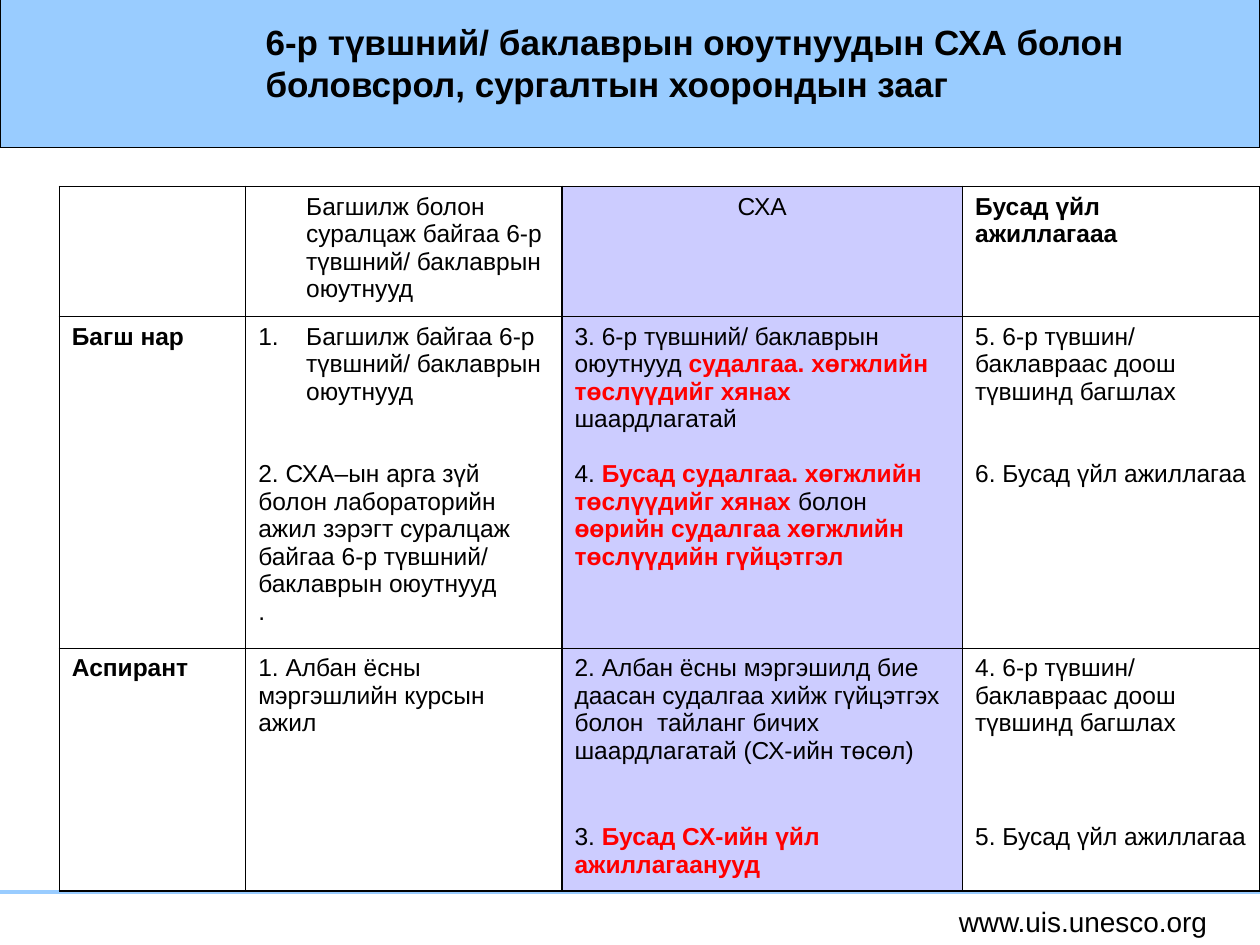
from dataclasses import dataclass
from itertools import accumulate

from lxml import etree
from pptx import Presentation
from pptx.dml.color import RGBColor
from pptx.enum.shapes import MSO_CONNECTOR, MSO_SHAPE
from pptx.enum.text import MSO_ANCHOR, PP_ALIGN
from pptx.oxml.ns import qn
from pptx.util import Inches, Pt

LEFT, CENTER = PP_ALIGN.LEFT, PP_ALIGN.CENTER
MIDDLE = MSO_ANCHOR.MIDDLE
RECTANGLE, STRAIGHT = MSO_SHAPE.RECTANGLE, MSO_CONNECTOR.STRAIGHT


@dataclass(frozen=True)
class Theme:
    font: str = "Arial"
    ink: str = "000000"
    accent: str = "FF0000"
    band: str = "99CCFF"
    column: str = "CCCCFF"
    title_size: float = 20
    body_size: float = 14
    footer_size: float = 16
    thin: float = 0.75
    outer: float = 1
    rule: float = 2.25


THEME = Theme()

# The slide is a grid of 1000 columns and 750 rows
WIDTH, HEIGHT = Inches(10), Inches(7.5)
UNIT = WIDTH // 1000
HEADER_BOX = (0, -8, 1000, 125)
TITLE_BOX = (201, 0, 774, 100)
TABLE_BOX = (47, 148, 953, 554)
FOOTER_BOX = (0, 708, 1000, 42)
COLUMNS = (148, 251, 318, 236)
ROWS = (98, 109, 154, 134, 59)
GROUP_STARTS = (0, 1, 3)  # rows with a line above them
RESEARCH_COLUMN = 2
HANGING = 38

# A cell is a list of paragraphs; in each, odd pieces between bars are accented
CELLS = [
    ["", "Багшилж болон суралцаж байгаа 6-р түвшний/ баклаврын оюутнууд",
     "СХА", "Бусад үйл ажиллагааа"],
    ["Багш нар", "Багшилж байгаа 6-р түвшний/ баклаврын оюутнууд",
     "3. 6-р түвшний/ баклаврын оюутнууд |судалгаа. хөгжлийн төслүүдийг хянах |шаардлагатай",
     "5. 6-р түвшин/ баклавраас доош түвшинд багшлах"],
    ["", "2. СХА–ын арга зүй болон лабораторийн ажил зэрэгт суралцаж байгаа "
     "6-р түвшний/ баклаврын оюутнууд\n.",
     "4. |Бусад судалгаа. хөгжлийн төслүүдийг хянах |болон "
     "|өөрийн судалгаа хөгжлийн төслүүдийн гүйцэтгэл",
     "6. Бусад үйл ажиллагаа"],
    ["Аспирант", "1. Албан ёсны мэргэшлийн курсын ажил",
     "2. Албан ёсны мэргэшилд бие даасан судалгаа хийж гүйцэтгэх болон  тайланг "
     "бичих шаардлагатай (СХ-ийн төсөл)",
     "4. 6-р түвшин/ баклавраас доош түвшинд багшлах"],
    ["", "", "3. |Бусад СХ-ийн үйл ажиллагаанууд", "5. Бусад үйл ажиллагаа"],
]
CELL_FORMATS = {
    (0, 1): {"margin": HANGING},
    (0, 2): {"align": CENTER},
    (0, 3): {"bold": True},
    (1, 0): {"bold": True},
    (1, 1): {"margin": HANGING, "numbered": True},
    (3, 0): {"bold": True},
}


def color(value):
    return RGBColor.from_string(value)


def place(box):
    return [part * UNIT for part in box]


def write(frame, text, *, size, bold=False, align=LEFT, margin=0, numbered=False):
    """Fill a text frame, one paragraph for each line of the text."""
    for index, line in enumerate(text.split("\n")):
        paragraph = frame.add_paragraph() if index else frame.paragraphs[0]
        properties = paragraph._p.get_or_add_pPr()
        if margin:
            properties.set("marL", str(margin * UNIT))
            properties.set("indent", str(-margin * UNIT if numbered else 0))
        if numbered:
            etree.SubElement(properties, qn("a:buAutoNum"), type="arabicPeriod")
        paragraph.alignment = align
        paragraph.font.size = Pt(size)
        for position, piece in enumerate(line.split("|")):
            if not piece:
                continue
            accented = position % 2 == 1
            run = paragraph.add_run()
            run.text = piece
            run.font.name = THEME.font
            run.font.size = Pt(size)
            run.font.bold = bold or accented
            run.font.color.rgb = color(THEME.accent if accented else THEME.ink)


def draw_border(cell, side, width):
    """Draw one side of a cell; a width of None leaves it open."""
    attributes = {"w": str(Pt(width or 0))}
    line = etree.Element(qn(f"a:ln{side}"), attributes)
    if width is None:
        etree.SubElement(line, qn("a:noFill"))
    else:
        fill = etree.SubElement(line, qn("a:solidFill"))
        etree.SubElement(fill, qn("a:srgbClr"), val=THEME.ink)
    return line


def add_header(slide, header_box, title_box):
    # Band across the top
    band = slide.shapes.add_shape(RECTANGLE, *place(header_box))
    band.line.color.rgb = color(THEME.ink)
    band.line.width = Pt(THEME.thin)
    # Title
    title = slide.shapes.add_shape(RECTANGLE, *place(title_box))
    title.line.fill.background()
    for shape in (band, title):
        shape.shadow.inherit = False
        shape.fill.solid()
        shape.fill.fore_color.rgb = color(THEME.band)
    title.text_frame.word_wrap = True
    title.text_frame.vertical_anchor = MIDDLE
    write(title.text_frame,
          "6-р түвшний/ баклаврын оюутнуудын СХА болон боловсрол, сургалтын хоорондын зааг",
          size=THEME.title_size, bold=True)


def add_footer(slide, box):
    left, top, width, height = box
    # Rule
    rule = slide.shapes.add_connector(STRAIGHT, *place((left, top, left + width, top)))
    rule.line.color.rgb = color(THEME.band)
    rule.line.width = Pt(THEME.rule)
    etree.SubElement(rule._element.spPr, qn("a:effectLst"))
    # Web address
    address = slide.shapes.add_textbox(
        *place((left + width * 3 // 4, top + 5, 219, height - 5)))
    address.text_frame.word_wrap = False
    write(address.text_frame, "www.uis.unesco.org", size=THEME.footer_size, align=CENTER)


def border_widths(row, column):
    """Lines run round the table, between groups of rows and between columns."""
    def level(edge):
        if edge in (0, len(ROWS)):
            return THEME.outer
        return THEME.thin if edge in GROUP_STARTS else None
    return {"L": THEME.thin, "R": THEME.thin, "T": level(row), "B": level(row + 1)}


def add_activity_table(slide, box):
    frame = slide.shapes.add_table(len(ROWS), len(COLUMNS), *place(box))
    table = frame.table
    table.first_row = table.horz_banding = False
    for column, width in zip(table.columns, COLUMNS):
        column.width = width * UNIT
    for row, height in zip(table.rows, ROWS):
        row.height = height * UNIT
    for row, texts in enumerate(CELLS):
        for column, text in enumerate(texts):
            cell = table.cell(row, column)
            write(cell.text_frame, text, size=THEME.body_size,
                  **CELL_FORMATS.get((row, column), {}))
            if column == RESEARCH_COLUMN:
                cell.fill.solid()
                cell.fill.fore_color.rgb = color(THEME.column)
            else:
                cell.fill.background()
            # Border lines come before the fill in the cell properties
            properties = cell._tc.get_or_add_tcPr()
            for position, (side, width) in enumerate(border_widths(row, column).items()):
                properties.insert(position, draw_border(cell, side, width))


def main():
    presentation = Presentation()
    presentation.slide_width, presentation.slide_height = WIDTH, HEIGHT
    slide = presentation.slides.add_slide(presentation.slide_layouts[6])
    add_header(slide, HEADER_BOX, TITLE_BOX)
    add_footer(slide, FOOTER_BOX)
    add_activity_table(slide, TABLE_BOX)
    presentation.save("out.pptx")


if __name__ == "__main__":
    main()
